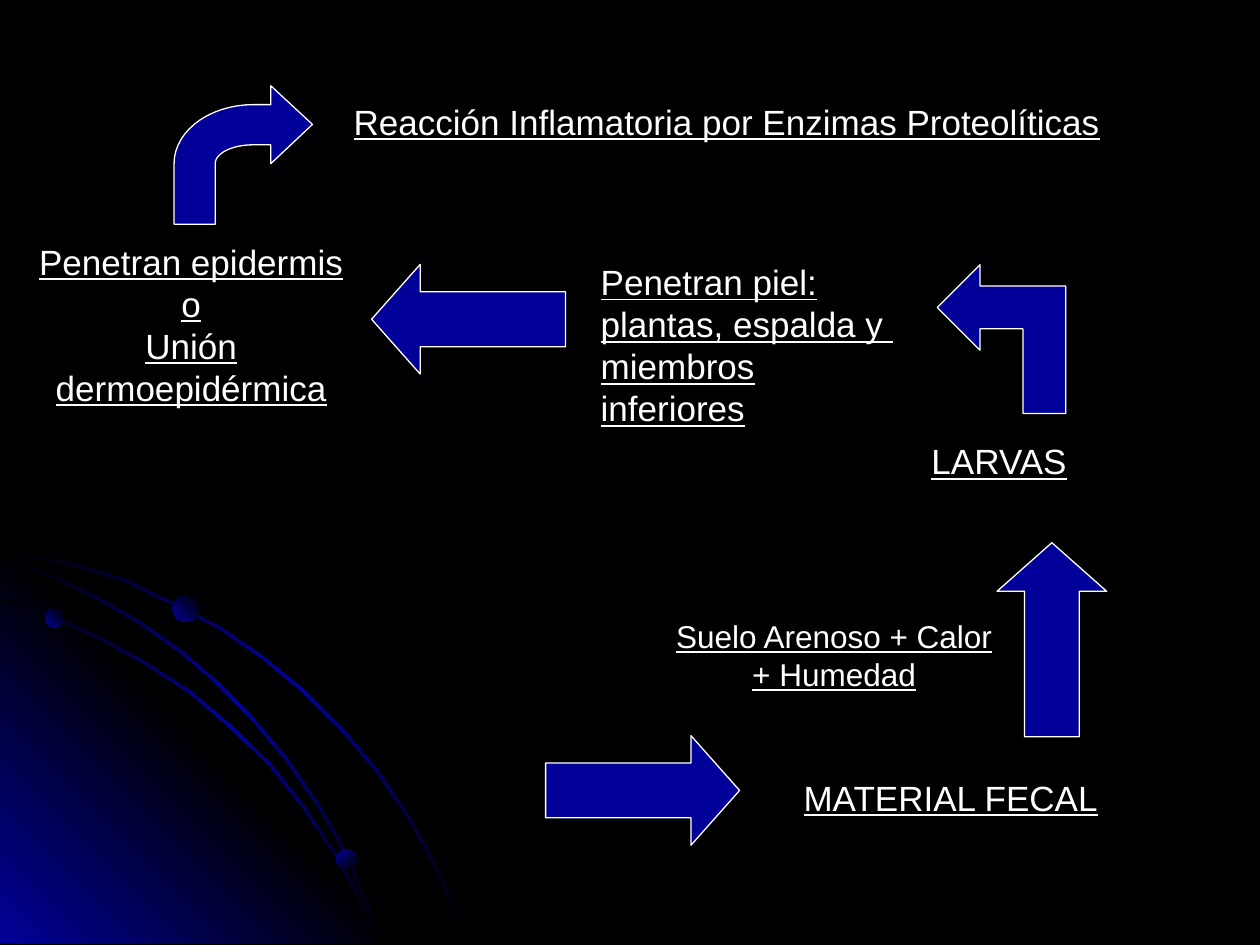
from math import cos, radians, sin

from lxml import etree
from pptx import Presentation
from pptx.dml.color import RGBColor
from pptx.enum.shapes import MSO_SHAPE
from pptx.enum.text import MSO_AUTO_SIZE, PP_ALIGN
from pptx.oxml.ns import qn
from pptx.util import Cm, Pt

ARROW = MSO_SHAPE.RIGHT_ARROW
CORNER_ARROW = MSO_SHAPE.BENT_UP_ARROW
ELLIPSE = MSO_SHAPE.OVAL
LEFT, CENTER = PP_ALIGN.LEFT, PP_ALIGN.CENTER
FIT_SHAPE = MSO_AUTO_SIZE.SHAPE_TO_FIT_TEXT

COLORS = {"black": "000000", "blue": "010199", "white": "FFFFFF"}
WIDTH, HEIGHT = 25.4, 19.05
RIBBON_SHIFT = 0.04

GLOW = [(0, 10.85), (0, 19.02), (8.18, 19.02)]
RIBBONS = [
    [(0, 11.05), (1.45, 11.35), (2.49, 11.66), (3.45, 12.12), (4.42, 12.62),
     (5.31, 13.23), (6.15, 13.92), (6.91, 14.68), (7.62, 15.52), (8.26, 16.46),
     (8.61, 17.09), (8.94, 17.73), (9.19, 18.36), (9.45, 19.02)],
    [(0, 12.07), (1.04, 12.4), (2.01, 12.83), (2.97, 13.36), (3.86, 13.94),
     (4.67, 14.63), (5.46, 15.39), (6.15, 16.26), (6.76, 17.17), (7.26, 18.08),
     (7.52, 18.54), (7.7, 19.02)],
    [(0, 11.23), (0.99, 11.56), (1.93, 12.01), (2.82, 12.52), (3.66, 13.11),
     (4.45, 13.79), (5.18, 14.55), (5.82, 15.32), (6.45, 16.23), (6.83, 16.89),
     (7.16, 17.6), (7.47, 18.29), (7.7, 19.02)],
]
DOTS = [(0.91, 12.27, 0.38, 315), (6.78, 17.12, 0.41, 45), (3.48, 12.01, 0.53, 315)]

ARROW_SIZE = (3.91, 2.21)
ARROW_ADJUSTMENTS = (0.5, 0.443)
ARROWS = [
    (ARROW, (11, 14.83), ARROW_SIZE, 0, ARROW_ADJUSTMENTS),
    (ARROW, (19.25, 11.79), ARROW_SIZE, 270, ARROW_ADJUSTMENTS),
    (CORNER_ARROW, (18.69, 5.54), (3, 2.59), 270, (0.333, 0.333, 0.333)),
    (ARROW, (7.49, 5.33), ARROW_SIZE, 180, ARROW_ADJUSTMENTS),
]

TEXTS = [
    (["MATERIAL FECAL"], (15.9, 15.52, 6.53, 1.09), 20, CENTER, False),
    (["Suelo Arenoso + Calor + Humedad"], (13.31, 12.32, 7.01, 1.78), 18, CENTER, True),
    (["LARVAS"], (18.49, 8.74, 3.3, 1.09), 20, CENTER, False),
    (["Penetran piel:", "plantas, espalda y ", "miembros", "inferiores"],
     (11.86, 5.13, 6.45, 3.68), 20, LEFT, False),
    (["Penetran epidermis o", "Unión dermoepidérmica"],
     (0.5, 4.72, 6.71, 3.63), 20, CENTER, True),
    (["Reacción Inflamatoria por Enzimas Proteolíticas"],
     (6.88, 1.9, 15.88, 1.12), 20, LEFT, False),
]


def rgb(name):
    return RGBColor.from_string(COLORS[name])


def apply_format(target, values):
    for name, value in values.items():
        setattr(target, name, value)


def quarter_arc(center, radius_x, radius_y):
    x, y = center
    return [(x - radius_x * sin(radians(angle)), y - radius_y * cos(radians(angle)))
            for angle in range(0, 91, 6)]


class FlowSlide:
    font_format = {"name": "Arial", "underline": True}

    def __init__(self, slide):
        self.slide = slide
        slide.background.fill.solid()
        slide.background.fill.fore_color.rgb = rgb("black")

    def gradient(self, shape, names, angle):
        shape.shadow.inherit = False
        shape.line.fill.background()
        shape.fill.gradient()
        shape.fill.gradient_angle = 360 - angle
        stops = next(shape.element.iter(qn("a:gsLst")))
        stops[:] = []
        for index, name in enumerate(names):
            position = str(index * 100000 // (len(names) - 1))
            stop = etree.SubElement(stops, qn("a:gs"), pos=position)
            etree.SubElement(stop, qn("a:srgbClr"), val=COLORS[name])

    def solid(self, shape):
        shape.shadow.inherit = False
        shape.fill.solid()
        shape.fill.fore_color.rgb = rgb("blue")
        shape.line.color.rgb = rgb("white")
        shape.line.width = Pt(0.75)

    def outline(self, points):
        start, *others = [(Cm(x), Cm(y)) for x, y in points]
        builder = self.slide.shapes.build_freeform(*start)
        builder.add_line_segments(others, close=True)
        return builder.convert_to_shape()

    def ribbon(self, edge):
        inner = [(max(x - RIBBON_SHIFT, 0), min(y + RIBBON_SHIFT, HEIGHT))
                 for x, y in reversed(edge)]
        self.gradient(self.outline(edge + inner), ["black", "blue", "black"], 45)

    def dot(self, left, top, size, angle):
        shape = self.slide.shapes.add_shape(ELLIPSE, Cm(left), Cm(top), Cm(size), Cm(size))
        self.gradient(shape, ["blue", "black"], angle)

    def arrow(self, kind, position, size, rotation, adjustments):
        shape = self.slide.shapes.add_shape(kind, *map(Cm, position + size))
        shape.rotation = rotation
        for index, value in enumerate(adjustments):
            shape.adjustments[index] = value
        self.solid(shape)

    def curved_arrow(self):
        center = (5.11, 3.3)
        head = [(5.46, 2.92), (5.46, 3.3), (6.3, 2.51), (5.46, 1.73), (5.46, 2.11)]
        outer = quarter_arc(center, 1.6, 1.19)
        inner = quarter_arc(center, 0.77, 0.38)
        foot = [(3.51, 4.52), (4.34, 4.52)]
        self.solid(self.outline(head + outer + foot + inner[::-1]))

    def text(self, lines, box, size, alignment, wrap):
        frame = self.slide.shapes.add_textbox(*map(Cm, box)).text_frame
        apply_format(frame, {"word_wrap": wrap, "auto_size": FIT_SHAPE,
                             "text": "\n".join(lines)})
        for paragraph in frame.paragraphs:
            paragraph.alignment = alignment
            font = paragraph.runs[0].font
            apply_format(font, {**self.font_format, "size": Pt(size)})
            font.color.rgb = rgb("white")


def main():
    presentation = Presentation()
    apply_format(presentation, {"slide_width": Cm(WIDTH), "slide_height": Cm(HEIGHT)})
    blank_layout = presentation.slide_layouts[6]
    flow = FlowSlide(presentation.slides.add_slide(blank_layout))

    first_ribbon, *other_ribbons = RIBBONS
    flow.ribbon(first_ribbon)
    flow.gradient(flow.outline(GLOW), ["blue", "black", "blue"], 315)
    for edge in other_ribbons:
        flow.ribbon(edge)
    for dot in DOTS:
        flow.dot(*dot)
    for arrow in ARROWS:
        flow.arrow(*arrow)
    flow.curved_arrow()
    for text in TEXTS:
        flow.text(*text)

    presentation.save("out.pptx")


if __name__ == "__main__":
    main()
